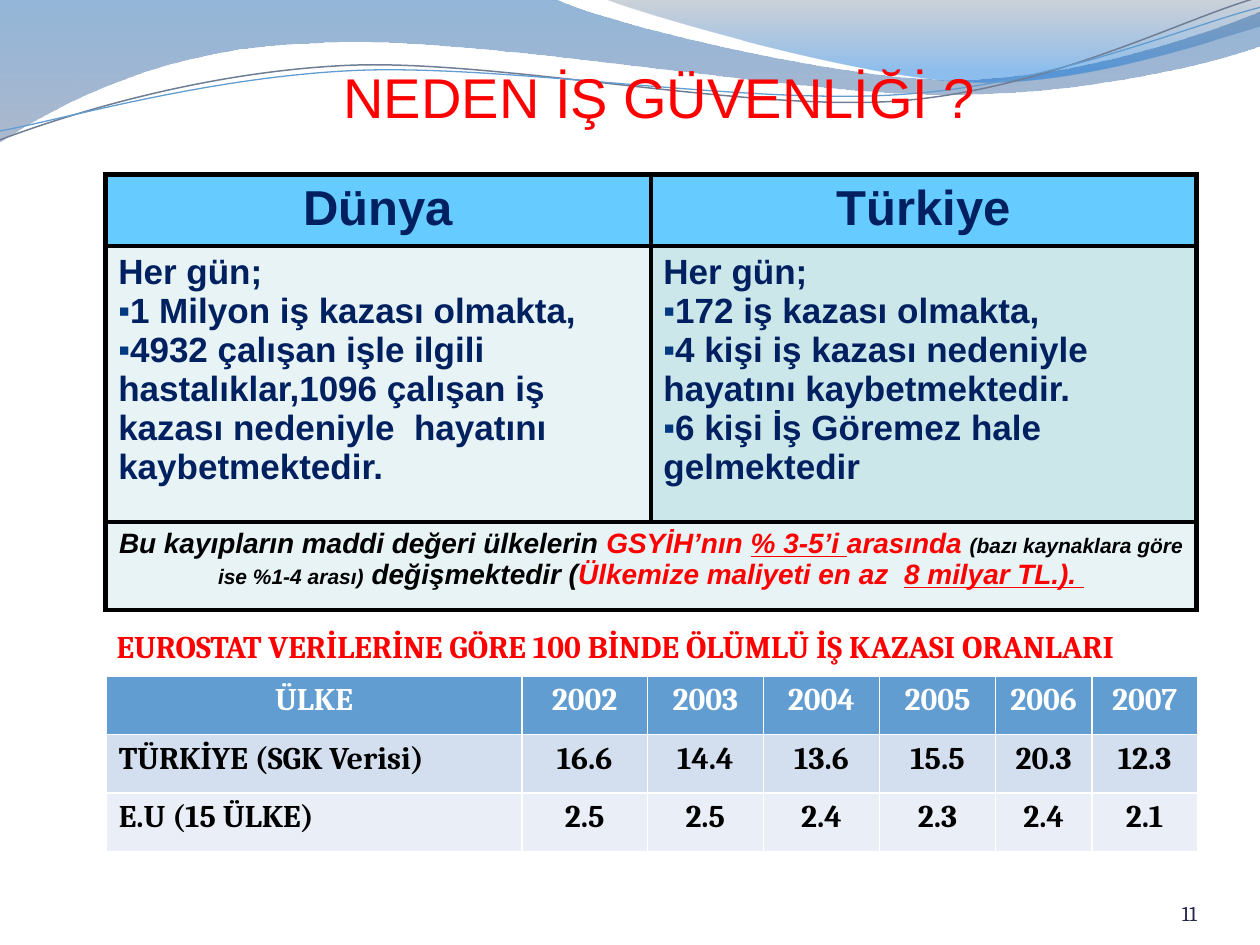
from lxml import etree
from pptx import Presentation, util as u
from pptx.dml.color import RGBColor
from pptx.enum import text
from pptx.oxml import ns

HEX = {
    "red": "FF0000", "navy": "002060", "black": "000000", "white": "FFFFFF",
    "page": "22264E", "bullet": "013A81", "sky": "66CCFF", "pale": "E7F3F4",
    "teal": "CCE7EA", "blue": "629DD1", "band": "D3DFEE", "light": "EAEFF7",
    "deep": "125EAA", "slate": "697FA4", "steel": "596982", "azure": "0670DA",
    "gray": "707E95",
}
LEFT, MID, RIGHT = text.PP_ALIGN.LEFT, text.PP_ALIGN.CENTER, text.PP_ALIGN.RIGHT


def node(root, tag, **attrs):
    return etree.SubElement(root, ns.qn("a:" + tag), attrs)


def rgb(name):
    return RGBColor.from_string(HEX[name])


class Deck:
    def __init__(self):
        self.prs = Presentation()
        self.prs.slide_width, self.prs.slide_height = u.Cm(25.4), u.Cm(19.05)
        self.slide = self.prs.slides.add_slide(self.prs.slide_layouts[6])

    def curve(self, steps, close):
        """Draw steps of 2 numbers (line end) or 6 (cubic curve)."""
        pts = [(u.Cm(x), u.Cm(y)) for step in steps
               for x, y in zip(step[::2], step[1::2])]
        form = self.slide.shapes.build_freeform(*pts[0])
        form.add_line_segments(pts[1:], close=close)
        shape = form.convert_to_shape()
        shape.shadow.inherit = False
        lines = iter(list(shape._element.iter(ns.qn("a:lnTo"))))
        for step in steps[1:]:
            first = next(lines)
            if len(step) == 6:
                first.tag = ns.qn("a:cubicBezTo")
                for _ in range(2):
                    line = next(lines)
                    first.append(line[0])
                    line.getparent().remove(line)
        return shape

    def wave(self, stops, *steps):
        """Draw a filled outline; stops are (position, colour, opacity %)."""
        shape = self.curve(steps, True)
        shape.line.fill.background()
        shape.fill.gradient()
        shape.fill.gradient_angle = 270
        for stop, (pos, name, _) in zip(shape.fill.gradient_stops, stops):
            stop.position = pos
            stop.color.rgb = rgb(name)
        marks = shape._element.spPr.iter(ns.qn("a:srgbClr"))
        for mark, (_, _, alpha) in zip(marks, stops):
            node(mark, "alpha", val=str(alpha * 1000))

    def strand(self, name, width, *steps):
        shape = self.curve(steps, False)
        shape.rotation = 357.3
        shape.fill.background()
        shape.line.color.rgb = rgb(name)
        shape.line.width = u.Pt(width)

    def para(self, par, runs, fmt, align=LEFT, bullet=False):
        """Fill a paragraph with (words, changes to fmt) runs."""
        par.alignment = align
        if bullet:
            ppr = par._p.get_or_add_pPr()
            ppr.set("marL", "0")
            ppr.set("indent", "0")
            node(node(ppr, "buClr"), "srgbClr", val=HEX["bullet"])
            node(ppr, "buSzPct", val="95000")
            node(ppr, "buFont", typeface="Arial")
            node(ppr, "buChar", char="▪")
        for words, change in runs:
            run = par.add_run()
            run.text = words
            for key, val in {**fmt, **change}.items():
                if key == "color":
                    run.font.color.rgb = rgb(val)
                else:
                    setattr(run.font, key, u.Pt(val) if key == "size" else val)

    def label(self, words, box, fmt, align=LEFT, **frame):
        area = self.slide.shapes.add_textbox(*map(u.Cm, box)).text_frame
        for key, val in {"word_wrap": True, **frame}.items():
            setattr(area, key, val)
        self.para(area.paragraphs[0], [(words, {})], fmt, align)

    def table(self, left, top, cols, rows):
        shape = self.slide.shapes.add_table(
            len(rows), len(cols), u.Cm(left), u.Cm(top),
            u.Cm(sum(cols)), u.Cm(sum(rows)))
        grid = shape.table
        grid.horz_banding = False
        for col, width in zip(grid.columns, cols):
            col.width = u.Cm(width)
        for row, height in zip(grid.rows, rows):
            row.height = u.Cm(height)
        return grid

    def cell(self, cell, fill, edge, width):
        props = cell._tc.get_or_add_tcPr()
        for side in "LRTB":
            line = node(props, "ln" + side, w=str(u.Pt(width)))
            node(node(line, "solidFill"), "srgbClr", val=HEX[edge])
        cell.fill.solid()
        cell.fill.fore_color.rgb = rgb(fill)

    def facts(self, heads, lists, note):
        grid = self.table(2.13, 3.52, [10.99, 11], [1.42, 5.56, 1.78])
        fills = [("sky", "sky"), ("pale", "teal"), ("pale", "pale")]
        for r, pair in enumerate(fills):
            for c, fill in enumerate(pair):
                self.cell(grid.cell(r, c), fill, "black", 3)
        grid.cell(2, 0).merge(grid.cell(2, 1))
        fmt = {"name": "Arial", "size": 20, "bold": True, "color": "navy"}
        for c, (head, items) in enumerate(zip(heads, lists)):
            self.para(grid.cell(0, c).text_frame.paragraphs[0],
                      [(head, {"size": 28})], fmt, MID)
            area = grid.cell(1, c).text_frame
            self.para(area.paragraphs[0], [("Her gün;", {})], fmt)
            for item in items:
                self.para(area.add_paragraph(), [(item, {})], fmt, bullet=True)
        self.para(grid.cell(2, 0).text_frame.paragraphs[0], note,
                  {**fmt, "size": 16, "italic": True, "color": "black"}, MID)

    def rates(self, data):
        grid = self.table(2.14, 13.63, [8.38, 2.53, 2.34, 2.34, 2.34, 1.94, 2.13],
                          [1.18] * 3)
        for r, (row, fill) in enumerate(zip(data, ("blue", "band", "light"))):
            fmt = {"name": "Cambria", "size": 18, "bold": True,
                   "color": "black" if r else "white"}
            for c, words in enumerate(row):
                cell = grid.cell(r, c)
                self.cell(cell, fill, "white", 1)
                self.para(cell.text_frame.paragraphs[0], [(words, {})], fmt,
                          LEFT if r and not c else MID)


def main():
    deck = Deck()
    deck.wave([(0, "deep", 45), (1, "slate", 55)],
              (0, 0), (11.18, -0.03), (12.09, 0.43, 16.87, 1.6, 19.25, 1.6),
              (21.67, 1.6, 24.33, 0.66, 25.4, 0.23), (25.43, 0.91),
              (24.97, 1.12, 22.1, 1.93, 18.95, 1.9),
              (15.8, 1.9, 9.7, 0.71, 6.53, 0.86),
              (3.28, 0.91, 1.17, 2.11, -0.03, 2.87), (0, 0))
    deck.wave([(0, "steel", 30), (0.8, "azure", 45)],
              (12.17, -0.03), (12.93, 0.28, 17.32, 1.57, 19.53, 1.65),
              (21.74, 1.75, 24.41, 0.81, 25.4, 0.53), (25.4, 0), (12.17, -0.03))
    deck.strand("gray", 0.85, (-0.05, 2.22), (1.19, 1.82, 4.01, 1.04, 7.05, 1.05),
                (10.05, 1.07, 15.02, 2.37, 18.08, 2.29),
                (21.13, 2.2, 23.86, 0.91, 25.41, 0.55))
    deck.strand("blue", 0.75, (-0.04, 2.04), (1.16, 1.89, 4.17, 1.15, 7.2, 1.16),
                (10.25, 1.18, 15.13, 2.25, 18.19, 2.16),
                (21.21, 2.1, 23.93, 1.06, 25.45, 0.75))

    sides = ("left", "right", "top", "bottom")
    deck.label("11", (22.02, 17.65, 2.11, 1.02),
               {"name": "Cambria", "size": 12, "color": "page"}, RIGHT,
               vertical_anchor=text.MSO_ANCHOR.BOTTOM,
               **{"margin_" + side: 0 for side in sides})
    red, small = {"color": "red"}, {"size": 12}
    under = {**red, "underline": True}
    deck.facts(
        ["Dünya", "Türkiye"],
        [["1 Milyon iş kazası olmakta,",
          "4932 çalışan işle ilgili hastalıklar,1096 çalışan iş kazası "
          "nedeniyle  hayatını kaybetmektedir."],
         ["172 iş kazası olmakta,",
          "4 kişi iş kazası nedeniyle hayatını kaybetmektedir.",
          "6 kişi İş Göremez hale gelmektedir"]],
        [("Bu kayıpların maddi değeri ülkelerin ", {}), ("GSYİH’nın ", red),
         ("% 3-5’i ", under), ("arasında ", red),
         ("(bazı kaynaklara göre ise %1-4 arası)", small),
         (" değişmektedir (", {}), ("Ülkemize maliyeti en az  ", red),
         ("8 milyar TL.). ", under)])
    deck.rates([
        ["ÜLKE", "2002", "2003", "2004", "2005", "2006", "2007"],
        ["TÜRKİYE (SGK Verisi)", "16.6", "14.4", "13.6", "15.5", "20.3", "12.3"],
        ["E.U (15 ÜLKE)", "2.5", "2.5", "2.4", "2.3", "2.4", "2.1"]])
    deck.label("EUROSTAT VERİLERİNE GÖRE 100 BİNDE ÖLÜMLÜ İŞ KAZASI ORANLARI",
               (2.1, 12.52, 23.01, 1.02),
               {"name": "Cambria", "size": 18, "bold": True, **red})
    deck.label("NEDEN İŞ GÜVENLİĞİ ?", (2.39, 1.14, 21.82, 1.6),
               {"name": "Arial", "size": 32, **red}, MID)
    deck.prs.save("out.pptx")


if __name__ == "__main__":
    main()
